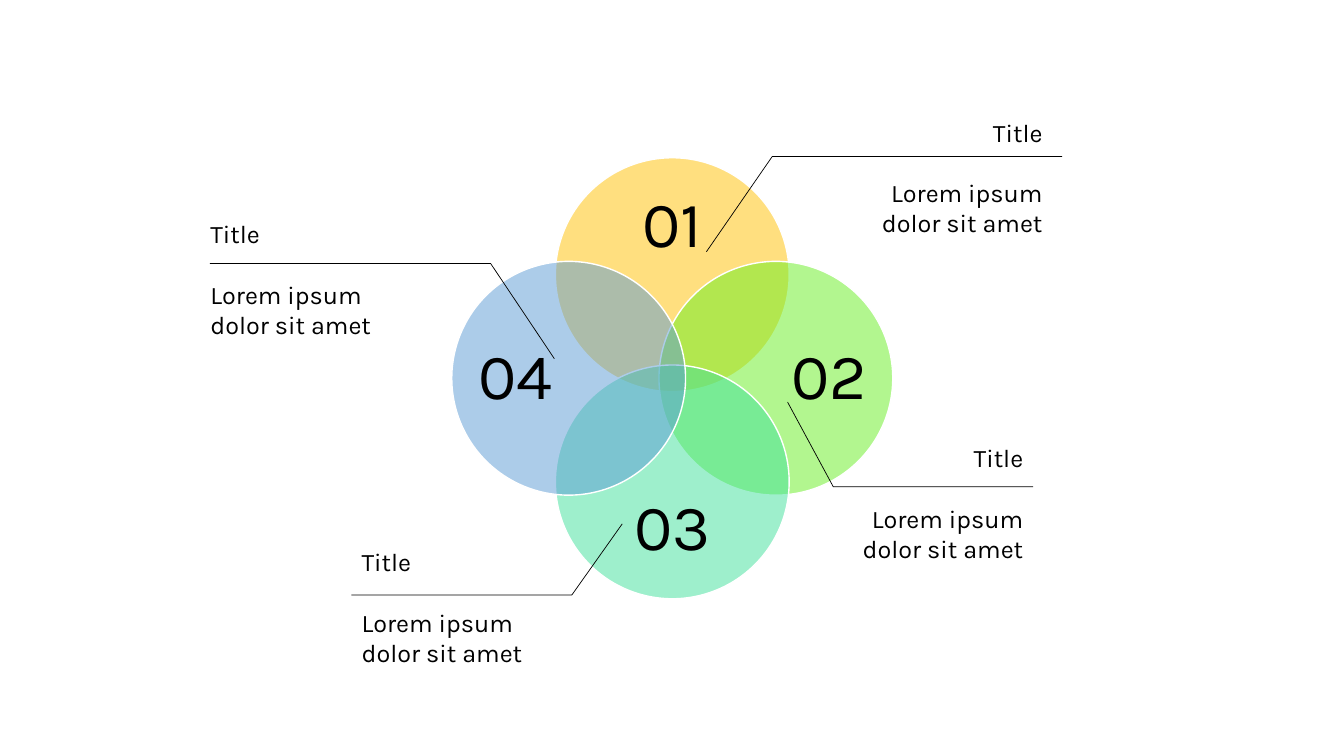
from lxml import etree
from pptx import Presentation
from pptx.dml.color import RGBColor
from pptx.enum.shapes import MSO_SHAPE
from pptx.enum.text import MSO_ANCHOR, MSO_AUTO_SIZE, PP_ALIGN
from pptx.oxml.ns import qn
from pptx.util import Pt

OVAL = MSO_SHAPE.OVAL
MIDDLE = MSO_ANCHOR.MIDDLE
GROW = MSO_AUTO_SIZE.SHAPE_TO_FIT_TEXT
LEFT, CENTER, RIGHT = PP_ALIGN.LEFT, PP_ALIGN.CENTER, PP_ALIGN.RIGHT

FONT = "Karla"
COLORS = {
    "gold": "FFC000",
    "lime": "67EF21",
    "mint": "3FE19B",
    "blue": "5B9BD5",
    "white": "FFFFFF",
    "black": "000000",
}
MID_X, MID_Y = 480.2, 270.2
SIZE, SHIFT = 167, 74

PETALS = [
    ("01", "gold", 0, -1, 108.2, 128, 53.3),
    ("02", "lime", 1, 0, 112, 64, 128),
    ("03", "mint", 0, 1, 108.2, 128, 53.3),
    ("04", "blue", -1, 0, 112, 64, 128),
]
LEADERS = [
    [(444.5, 374.2), (408.5, 425), (251, 425)],
    [(396, 256.2), (350.5, 188.2), (150, 188.2)],
    [(504.6, 179.8), (551.6, 111.8), (758.6, 111.8)],
    [(562.6, 287.2), (595.2, 347.6), (738, 347.6)],
]
NOTES = [
    (143.2, 152.6, LEFT),
    (251.2, 386.8, LEFT),
    (599.8, 312.6, RIGHT),
    (613.6, 80, RIGHT),
]


def paint(name):
    return RGBColor.from_string(COLORS[name])


def style(para, size, align):
    para.alignment = align
    for run in para.runs:
        run.font.name = FONT
        run.font.size = Pt(size)
        run.font.color.rgb = paint("black")


def add_disc(slide, x, y, color):
    disc = slide.shapes.add_shape(
        OVAL, Pt(x - SIZE / 2), Pt(y - SIZE / 2), Pt(SIZE), Pt(SIZE))
    disc.shadow.inherit = False
    disc.fill.solid()
    disc.fill.fore_color.rgb = paint(color)
    tint = disc.fill._xPr.find(qn("a:solidFill"))[0]
    etree.SubElement(tint, qn("a:alpha")).set("val", "50000")
    disc.line.color.rgb = paint("white")
    disc.line.width = Pt(1)


def add_label(slide, text, x, y, width, height):
    box = slide.shapes.add_textbox(
        Pt(x - width / 2), Pt(y - height / 2), Pt(width), Pt(height))
    frame = box.text_frame
    frame.word_wrap = True
    frame.vertical_anchor = MIDDLE
    frame.margin_left = frame.margin_right = 0
    frame.margin_top = frame.margin_bottom = 0
    frame.text = text
    para = frame.paragraphs[0]
    para.line_spacing = 0.9
    style(para, 46, CENTER)


def add_leader(slide, points):
    start, *rest = [(Pt(x), Pt(y)) for x, y in points]
    pen = slide.shapes.build_freeform(*start)
    pen.add_line_segments(rest, close=False)
    leader = pen.convert_to_shape()
    leader.shadow.inherit = False
    leader.fill.background()
    leader.line.color.rgb = paint("black")
    leader.line.width = Pt(0.5)


def add_note(slide, x, y, align):
    box = slide.shapes.add_textbox(Pt(x), Pt(y), Pt(138.2), Pt(94.3))
    frame = box.text_frame
    frame.word_wrap = True
    frame.auto_size = GROW
    frame.text = "Title\nLorem ipsum dolor sit amet"
    for para in frame.paragraphs:
        style(para, 18, align)
    frame.paragraphs[1].space_before = Pt(21.6)


def main():
    deck = Presentation()
    deck.slide_width, deck.slide_height = Pt(960), Pt(540)
    slide = deck.slides.add_slide(deck.slide_layouts[6])
    for text, color, dx, dy, reach, width, height in PETALS:
        add_disc(slide, MID_X + dx * SHIFT, MID_Y + dy * SHIFT, color)
        add_label(slide, text, MID_X + dx * reach, MID_Y + dy * reach,
                  width, height)
    for points in LEADERS:
        add_leader(slide, points)
    for x, y, align in NOTES:
        add_note(slide, x, y, align)
    deck.save("out.pptx")


if __name__ == "__main__":
    main()
